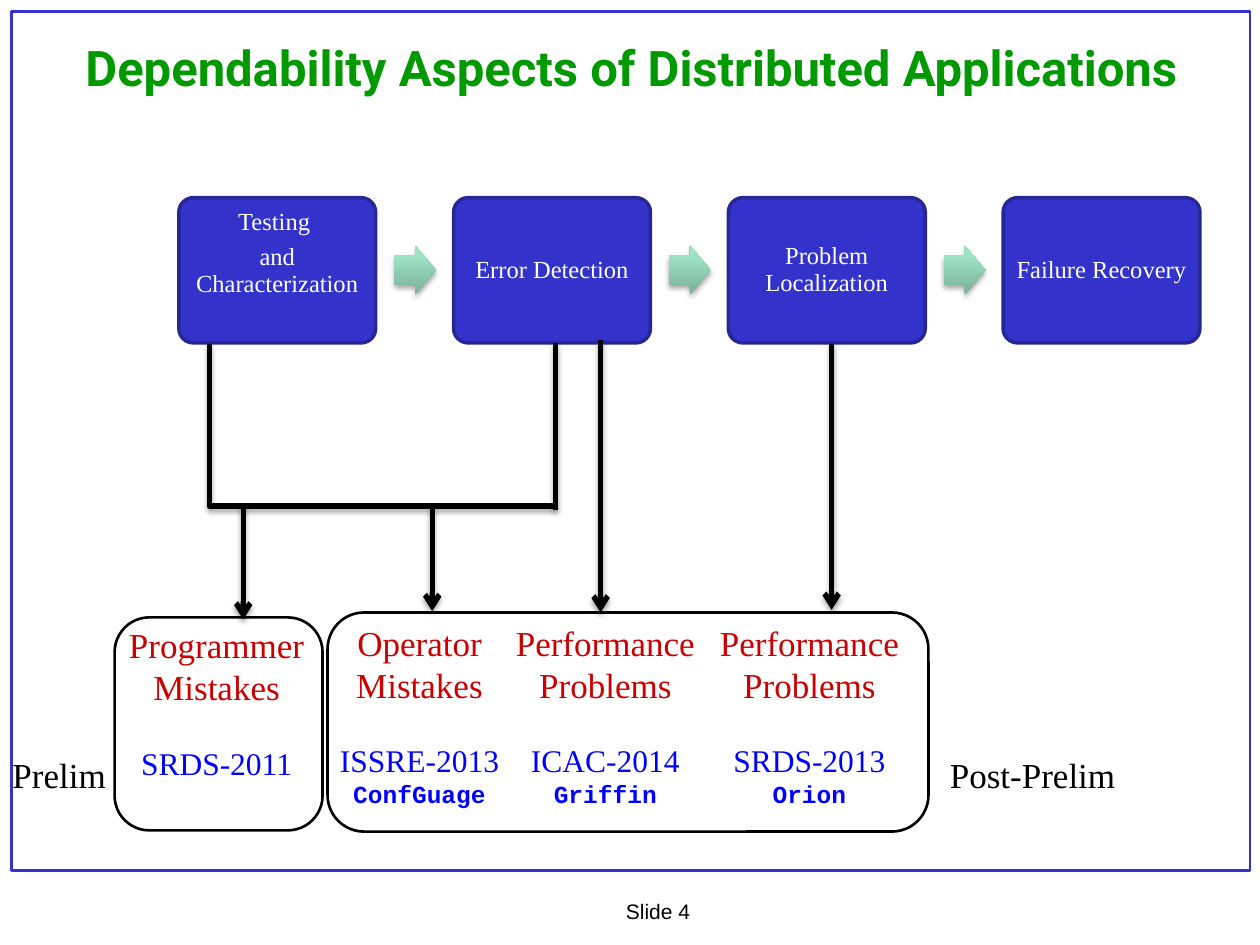
from lxml import etree
from pptx import Presentation
from pptx.dml.color import RGBColor
from pptx.enum.shapes import MSO_CONNECTOR, MSO_SHAPE
from pptx.enum.text import MSO_ANCHOR, MSO_AUTO_SIZE, PP_ALIGN
from pptx.oxml.ns import qn
from pptx.util import Pt

CENTER, LEFT = PP_ALIGN.CENTER, PP_ALIGN.LEFT
TOP, MIDDLE = MSO_ANCHOR.TOP, MSO_ANCHOR.MIDDLE
FIXED = MSO_AUTO_SIZE.NONE
RECTANGLE, ROUNDED = MSO_SHAPE.RECTANGLE, MSO_SHAPE.ROUNDED_RECTANGLE
RIGHT_ARROW = MSO_SHAPE.RIGHT_ARROW
STRAIGHT, ELBOW = MSO_CONNECTOR.STRAIGHT, MSO_CONNECTOR.ELBOW

SERIF = "Times New Roman"
BLACK, INDIGO = "000000", "3333CC"
TITLE = {"name": "Roboto", "size": Pt(28), "bold": True, "color": "009900"}
STAGE = {"name": SERIF, "size": Pt(14), "color": "FFFFFF"}
PROBLEM = {"name": SERIF, "size": Pt(20), "color": "CC0000"}
VENUE = {"name": SERIF, "size": Pt(18), "color": "0000FF"}
TOOL = {"name": "Courier New", "size": Pt(14), "bold": True, "color": "0000FF"}
PHASE = {"name": SERIF, "size": Pt(20), "color": BLACK}
FOOTER = {"name": "Arial", "size": Pt(12), "color": BLACK}

STAGE_STEP = 157
STAGES = [
    (["Testing ", "and Characterization"], TOP),
    (["Error Detection"], MIDDLE),
    (["Problem Localization"], MIDDLE),
    (["Failure Recovery"], MIDDLE),
]
STUDIES = [
    (66.2, 352.8, 115.2, ["Programmer ", "Mistakes"], "SRDS-2011", None),
    (186.5, 351.4, 106.5, ["Operator", "Mistakes"], "ISSRE-2013", "ConfGuage"),
    (287.3, 351.4, 117.3, ["Performance", "Problems"], "ICAC-2014", "Griffin"),
    (403.9, 351.4, 117.3, ["Performance", "Problems"], "SRDS-2013", "Orion"),
]
GROUPS = [(65.5, 352.8, 118.8, 121.7), (187.2, 350, 343.4, 125.2)]
ARROWS = [(139, 288, 354), (247, 289.4, 349.2), (343.2, 194.4, 350), (475.2, 196.5, 348.5)]


def rgb(value):
    return RGBColor.from_string(value)


def apply_format(target, values):
    for name, value in values.items():
        if name == "color":
            target.color.rgb = rgb(value)
        else:
            setattr(target, name, value)


def write_lines(frame, lines, align, **spacing):
    for index, (text, style) in enumerate(lines):
        paragraph = frame.paragraphs[0] if index == 0 else frame.add_paragraph()
        paragraph.text = text
        apply_format(paragraph, {"alignment": align, **spacing})
        apply_format(paragraph.font, style)
    return frame.paragraphs


def add_soft_shadow(element):
    properties = element.spPr
    for effects in properties.findall(qn("a:effectLst")):
        properties.remove(effects)
    effects = etree.SubElement(properties, qn("a:effectLst"))
    shadow = etree.SubElement(effects, qn("a:outerShdw"), blurRad=str(Pt(3.1)),
                              dist=str(Pt(1.8)), dir="5400000", rotWithShape="0")
    tint = etree.SubElement(shadow, qn("a:srgbClr"), val=BLACK)
    etree.SubElement(tint, qn("a:alpha"), val="35000")


def add_outline(slide, kind, box, color, width):
    outline = slide.shapes.add_shape(kind, *map(Pt, box))
    outline.shadow.inherit = False
    outline.fill.background()
    apply_format(outline.line, {"color": color, "width": Pt(width)})
    return outline


def add_stage(slide, left, lines, anchor):
    stage = add_outline(slide, ROUNDED, (left, 113, 112.5, 83), "262697", 2)
    stage.adjustments[0] = 0.1
    stage.fill.solid()
    stage.fill.fore_color.rgb = rgb(INDIGO)
    frame = stage.text_frame
    sides = ("margin_left", "margin_top", "margin_right", "margin_bottom")
    apply_format(frame, {"word_wrap": True, "vertical_anchor": anchor,
                         **dict.fromkeys(sides, Pt(4.3))})
    write_lines(frame, [(line, STAGE) for line in lines], CENTER,
                line_spacing=0.9, space_after=Pt(4.9))


def add_flow_arrow(slide, left):
    arrow = slide.shapes.add_shape(RIGHT_ARROW, Pt(left), Pt(140.4), Pt(23.8), Pt(28))
    arrow.adjustments[0] = 0.6
    arrow.line.fill.background()
    arrow.fill.gradient()
    arrow.fill.gradient_angle = 90
    stops = [("7AAF97", 0), ("9EE3C5", 0.8)]
    for stop, (color, position) in zip(arrow.fill.gradient_stops, stops):
        apply_format(stop, {"color": color, "position": position})
    add_soft_shadow(arrow.element)


def add_link(slide, start, end, kind=STRAIGHT, head=False):
    link = slide.shapes.add_connector(kind, *map(Pt, start + end))
    apply_format(link.line, {"color": BLACK, "width": Pt(3)})
    if head:
        etree.SubElement(link.line._get_or_add_ln(), qn("a:tailEnd"), type="arrow")
    if kind == ELBOW:
        guides = link.element.spPr.find(qn("a:prstGeom")).get_or_add_avLst()
        etree.SubElement(guides, qn("a:gd"), name="adj1", fmla="val 0")
    add_soft_shadow(link.element)


def add_label(slide, box, lines, align=LEFT):
    label = slide.shapes.add_textbox(*map(Pt, box))
    label.text_frame.word_wrap = False
    return write_lines(label.text_frame, lines, align)


def add_study(slide, left, top, width, problem, venue, tool):
    lines = [(line, PROBLEM) for line in problem] + [(venue, VENUE)]
    if tool:
        lines.append((tool, TOOL))
    height = 116.6 if tool else 99.4
    paragraphs = add_label(slide, (left, top, width, height), lines, CENTER)
    paragraphs[len(problem)].space_before = Pt(20.7)


def add_title(slide, text):
    title = slide.shapes.title
    apply_format(title, {"left": Pt(17.3), "top": Pt(17.3),
                         "width": Pt(686.9), "height": Pt(41.8)})
    apply_format(title.text_frame, {"vertical_anchor": MIDDLE, "auto_size": FIXED,
                                    "word_wrap": True})
    write_lines(title.text_frame, [(text, TITLE)], CENTER)


def main():
    deck = Presentation()
    deck.slide_width, deck.slide_height = Pt(720), Pt(540)
    slide = deck.slides.add_slide(deck.slide_layouts[5])
    add_outline(slide, RECTANGLE, (6.5, 6.5, 707.8, 491), INDIGO, 1.5)
    add_title(slide, "Dependability Aspects of Distributed Applications")
    for index, (lines, anchor) in enumerate(STAGES):
        add_stage(slide, 102.2 + index * STAGE_STEP, lines, anchor)
    for index in range(len(STAGES) - 1):
        add_flow_arrow(slide, 225.4 + index * STAGE_STEP)
    for box in GROUPS:
        add_outline(slide, ROUNDED, box, BLACK, 1.5)
    for study in STUDIES:
        add_study(slide, *study)
    add_link(slide, (119.5, 196.5), (317.5, 289.2), ELBOW)
    add_link(slide, (317.5, 196), (317.5, 291.3))
    for x, top, bottom in ARROWS:
        add_link(slide, (x, top), (x, bottom), head=True)
    add_label(slide, (0, 427, 68.4, 31.7), [("Prelim", PHASE)])
    add_label(slide, (535.7, 427, 110.2, 31.7), [("Post-Prelim", PHASE)])
    add_label(slide, (350.6, 509.8, 59, 21.6), [("Slide 4", FOOTER)])
    deck.save("out.pptx")


if __name__ == "__main__":
    main()
